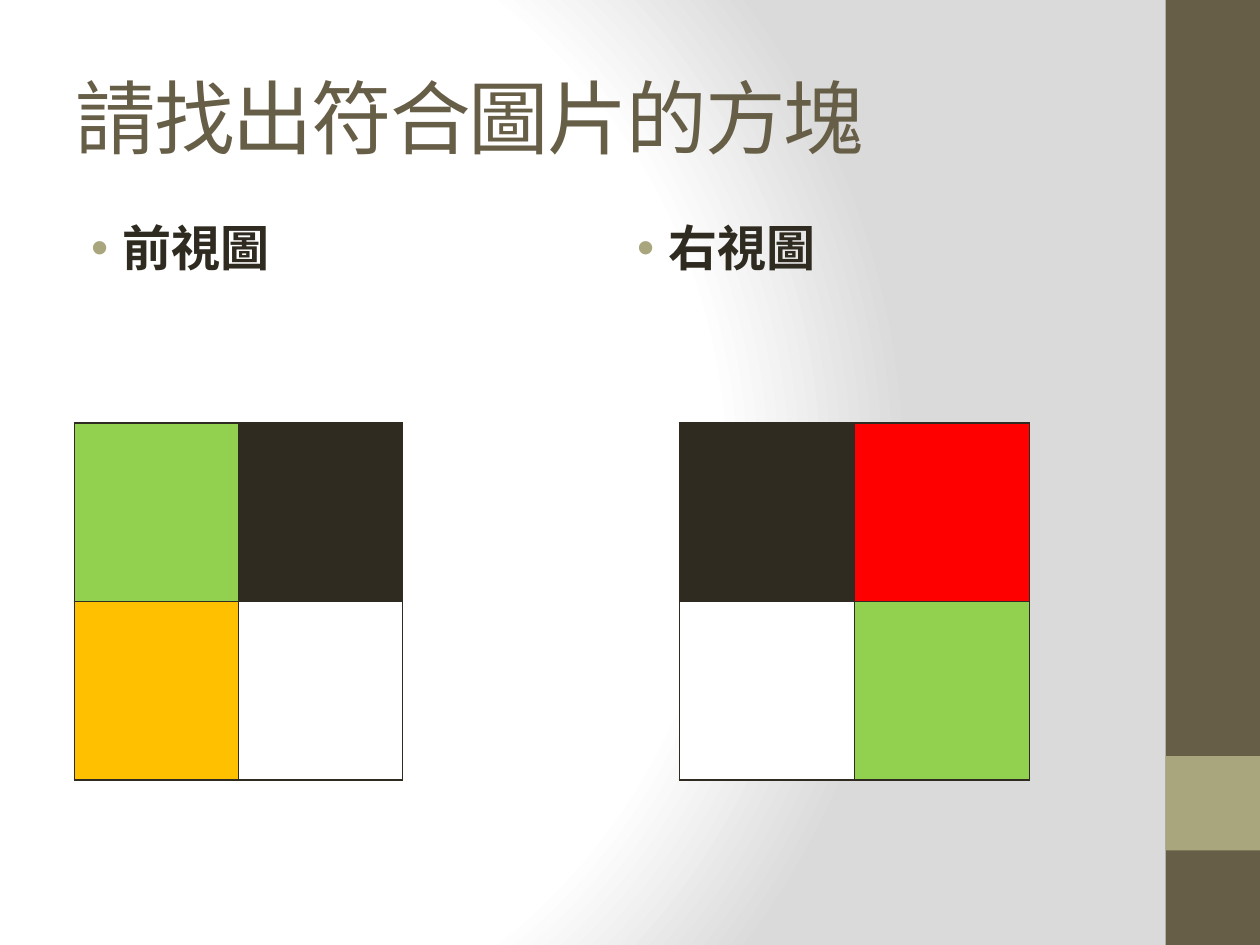
from dataclasses import dataclass

from pptx import Presentation
from pptx.dml.color import RGBColor
from pptx.enum.shapes import MSO_SHAPE as Shape
from pptx.enum.text import MSO_ANCHOR as Anchor, MSO_AUTO_SIZE as AutoSize, PP_ALIGN as Align
from pptx.oxml import parse_xml
from pptx.oxml.ns import nsdecls, qn
from pptx.slide import Slide
from pptx.text.text import TextFrame
from pptx.util import Pt


@dataclass(frozen=True)
class Theme:
    brown: str = "675E47"
    olive: str = "A9A57C"
    ink: str = "2F2B20"
    green: str = "92D050"
    amber: str = "FFC000"
    red: str = "FF0000"
    white: str = "FFFFFF"
    grey: str = "DADADA"
    heading_font: str = "Cambria"
    body_font: str = "Calibri"
    title_size: float = 46
    label_size: float = 28


THEME = Theme()


@dataclass(frozen=True)
class View:
    label: str
    label_left: float
    grid_left: float
    column_width: float
    colors: tuple[tuple[str, str], tuple[str, str]]


VIEWS = (
    View("前視圖", 36, 42.5, 93.75,
         ((THEME.green, THEME.ink), (THEME.amber, THEME.white))),
    View("右視圖", 348, 388.25, 100,
         ((THEME.ink, THEME.red), (THEME.white, THEME.green))),
)
LABEL_TOP, LABEL_WIDTH, LABEL_HEIGHT = 121, 288, 361.5
GRID_TOP, ROW_HEIGHT = 241.75, 102


def write_text(frame: TextFrame, text: str, *, font: str, size: float, color: str,
               bold: bool = False, spacing: float = 0, bullet: str = "",
               anchor: Anchor = Anchor.TOP) -> None:
    frame.word_wrap = True
    frame.auto_size = AutoSize.NONE
    frame.vertical_anchor = anchor
    para = frame.paragraphs[0]
    para.alignment = Align.LEFT
    span = para.add_run()
    span.text = text
    span.font.name = font
    span.font.size = Pt(size)
    span.font.bold = bold
    span.font.color.rgb = RGBColor.from_string(color)
    if spacing:
        span.font._element.set("spc", str(round(spacing * 100)))
    if bullet:
        para.space_before = Pt(size * 0.2)
        settings = para._p.get_or_add_pPr()
        settings.set("marL", str(Pt(27)))
        settings.set("indent", str(-Pt(18)))
        for xml in (
            f'<a:buClr {nsdecls("a")}><a:srgbClr val="{bullet}"/></a:buClr>',
            f'<a:buFont {nsdecls("a")} typeface="Arial"/>',
            f'<a:buChar {nsdecls("a")} char="•"/>',
        ):
            settings.append(parse_xml(xml))


def paint_background(page: Slide) -> None:
    page.background.fill.gradient()
    gradient = next(page.element.iter(qn("a:gradFill")))
    stops = "".join(
        f'<a:gs pos="{position * 1000}"><a:srgbClr val="{color}"/></a:gs>'
        for position, color in ((0, THEME.white), (75, THEME.white), (100, THEME.grey))
    )
    gradient.getparent().replace(gradient, parse_xml(
        f'<a:gradFill {nsdecls("a")} rotWithShape="1"><a:gsLst>{stops}</a:gsLst>'
        '<a:path path="circle"><a:fillToRect l="20000" t="50000" r="100000" b="50000"/>'
        '</a:path></a:gradFill>'
    ))


def draw_band(page: Slide, top: float, height: float, color: str) -> None:
    band = page.shapes.add_shape(Shape.RECTANGLE, Pt(666), Pt(top), Pt(54), Pt(height))
    band.shadow.inherit = False
    band.fill.solid()
    band.fill.fore_color.rgb = RGBColor.from_string(color)
    band.line.fill.background()


def draw_view(page: Slide, view: View) -> None:
    box = page.shapes.add_textbox(
        Pt(view.label_left), Pt(LABEL_TOP), Pt(LABEL_WIDTH), Pt(LABEL_HEIGHT))
    write_text(box.text_frame, view.label, font=THEME.body_font, size=THEME.label_size,
               color=THEME.ink, bold=True, bullet=THEME.olive)

    grid = page.shapes.add_table(
        2, 2, Pt(view.grid_left), Pt(GRID_TOP),
        Pt(view.column_width * 2), Pt(ROW_HEIGHT * 2)).table
    grid.first_row = False
    grid.horz_banding = False
    for column in grid.columns:
        column.width = Pt(view.column_width)
    for row, colors in zip(grid.rows, view.colors):
        row.height = Pt(ROW_HEIGHT)
        for cell, color in zip(row.cells, colors):
            settings = cell._tc.get_or_add_tcPr()
            for side in ("lnL", "lnR", "lnT", "lnB"):
                settings.append(parse_xml(
                    f'<a:{side} {nsdecls("a")} w="{Pt(1)}"><a:solidFill>'
                    f'<a:srgbClr val="{THEME.ink}"/></a:solidFill></a:{side}>'
                ))
            cell.fill.solid()
            cell.fill.fore_color.rgb = RGBColor.from_string(color)


def main() -> None:
    deck = Presentation()
    deck.slide_width, deck.slide_height = Pt(720), Pt(540)
    page = deck.slides.add_slide(deck.slide_layouts[5])
    paint_background(page)
    draw_band(page, 0, 540, THEME.brown)
    draw_band(page, 432, 54, THEME.olive)

    title = page.shapes.title
    title.left, title.top, title.width, title.height = Pt(36), Pt(21.6), Pt(600), Pt(90)
    write_text(title.text_frame, "請找出符合圖片的方塊", font=THEME.heading_font,
               size=THEME.title_size, color=THEME.brown, spacing=-1, anchor=Anchor.MIDDLE)

    for view in VIEWS:
        draw_view(page, view)
    deck.save("out.pptx")


if __name__ == "__main__":
    main()
